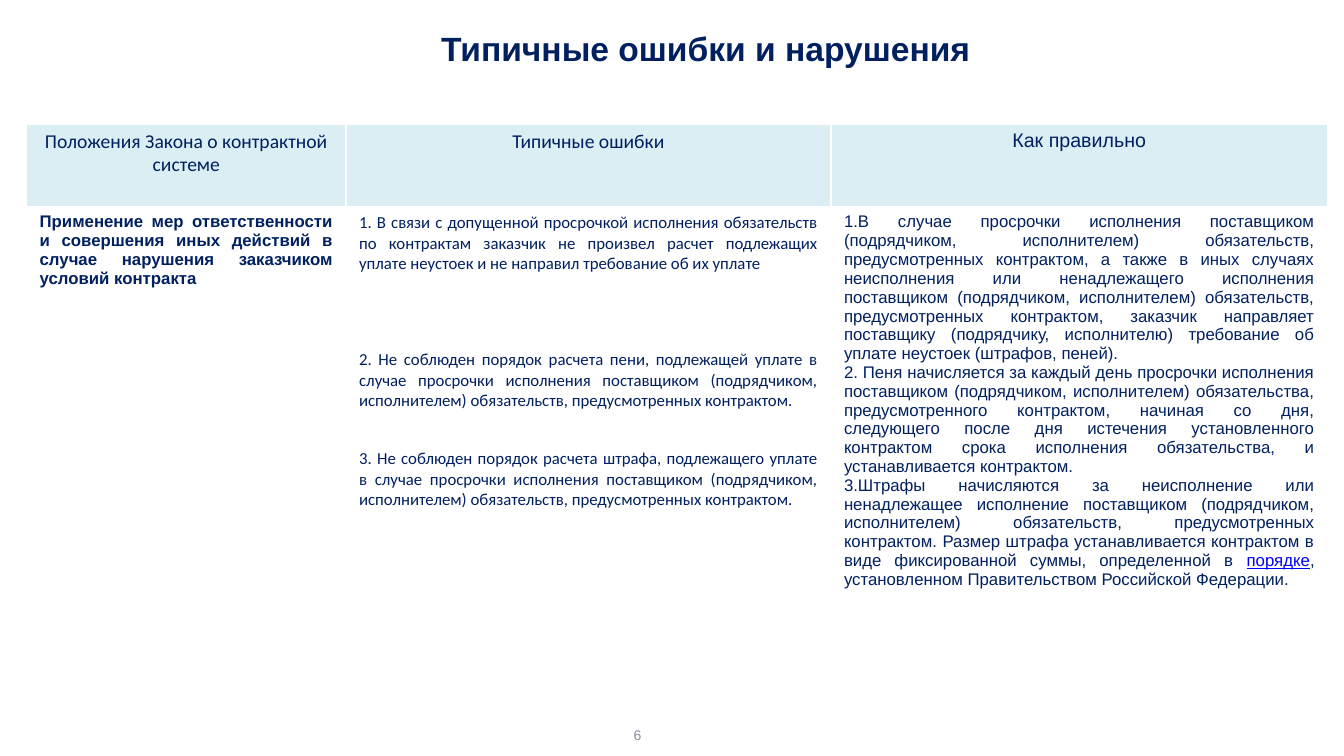
from pptx import Presentation
from pptx.dml.color import RGBColor
from pptx.enum.text import MSO_ANCHOR, PP_ALIGN
from pptx.oxml import parse_xml
from pptx.oxml.ns import nsdecls
from pptx.util import Cm, Pt

CENTER, FULL = PP_ALIGN.CENTER, PP_ALIGN.JUSTIFY
MIDDLE = MSO_ANCHOR.MIDDLE
NAVY = RGBColor(0x00, 0x20, 0x60)
PALE = RGBColor(0xDB, 0xEE, 0xF4)
BLUE = RGBColor(0x00, 0x00, 0xFF)
GREY = RGBColor(0x8C, 0x8D, 0x9D)

HEAD = {"size": Pt(14), "bold": False}
BODY = {"size": Pt(12), "bold": False}
STRONG = {"size": Pt(12), "bold": True}
TITLE = {"size": Pt(24), "bold": True, "name": "Arial"}
NUMBER = {"size": Pt(10), "name": "Arial"}
INSET = {"margin_left": Cm(0.33), "margin_right": Cm(0.33),
         "margin_top": Cm(0.13), "margin_bottom": Cm(0.13)}

WIDTHS = (8.05, 12.22, 12.52)
HEIGHTS = (2.1, 10.42)
HEADS = (("Положения Закона о контрактной системе", "Calibri"),
         ("Типичные ошибки", "Calibri"),
         ("Как правильно", "Arial"))
TOPIC = ("Применение мер ответственности и совершения иных действий в случае "
         "нарушения заказчиком условий контракта")
FAULTS = (
    (0, " В связи с допущенной просрочкой исполнения обязательств по контрактам "
        "заказчик не произвел расчет подлежащих уплате неустоек и не направил "
        "требование об их уплате"),
    (54, " Не соблюден порядок расчета пени, подлежащей уплате в случае просрочки "
         "исполнения поставщиком (подрядчиком, исполнителем) обязательств, "
         "предусмотренных контрактом."),
    (27, " Не соблюден порядок расчета штрафа, подлежащего уплате в случае просрочки "
         "исполнения поставщиком (подрядчиком, исполнителем) обязательств, "
         "предусмотренных контрактом."),
)
RULES = (
    (0, "В случае просрочки исполнения поставщиком (подрядчиком, исполнителем) "
        "обязательств, предусмотренных контрактом, а также в иных случаях "
        "неисполнения или ненадлежащего исполнения поставщиком (подрядчиком, "
        "исполнителем) обязательств, предусмотренных контрактом, заказчик "
        "направляет поставщику (подрядчику, исполнителю) требование об уплате "
        "неустоек (штрафов, пеней)."),
    (0, " Пеня начисляется за каждый день просрочки исполнения поставщиком "
        "(подрядчиком, исполнителем) обязательства, предусмотренного контрактом, "
        "начиная со дня, следующего после дня истечения установленного контрактом "
        "срока исполнения обязательства, и устанавливается контрактом."),
    (0, "Штрафы начисляются за неисполнение или ненадлежащее исполнение поставщиком "
        "(подрядчиком, исполнителем) обязательств, предусмотренных контрактом. "
        "Размер штрафа устанавливается контрактом в виде фиксированной суммы, "
        "определенной в ", "порядке",
        ", установленном Правительством Российской Федерации."),
)


def apply(item, form):
    """Set each attribute named in the format."""
    for key, value in form.items():
        setattr(item, key, value)


def write(para, parts, align, form, color=NAVY):
    """Fill a paragraph with runs; every second run is marked as a link."""
    para.alignment = align
    for i, part in enumerate(parts):
        run = para.add_run()
        run.text = part
        apply(run.font, form)
        run.font.color.rgb = BLUE if i % 2 else color
        if i % 2:
            run.font.underline = True


def number(para):
    """Give a paragraph an automatic number with no indent."""
    props = para._p.get_or_add_pPr()
    props.set("marL", "0")
    props.set("indent", "0")
    props.append(parse_xml(
        f'<a:buFont {nsdecls("a")} typeface="+mj-lt"/>'))
    props.append(parse_xml(
        f'<a:buAutoNum {nsdecls("a")} type="arabicPeriod"/>'))


def add_list(cell, items, form):
    """Write numbered items into a cell."""
    frame = cell.text_frame
    for i, (gap, *parts) in enumerate(items):
        para = frame.add_paragraph() if i else frame.paragraphs[0]
        number(para)
        if gap:
            para.space_before = Pt(gap)
        write(para, parts, FULL, form)
        apply(para.font, form)
        para.font.color.rgb = NAVY


def edge(cell, base):
    """Draw white borders with the given bottom width in points."""
    props = cell._tc.get_or_add_tcPr()
    for side, width in zip("LRTB", (1, 1, 1, base)):
        props.append(parse_xml(
            f'<a:ln{side} {nsdecls("a")} w="{Pt(width)}"><a:solidFill>'
            f'<a:srgbClr val="FFFFFF"/></a:solidFill></a:ln{side}>'))


def add_title(slide, box):
    """Place the slide title in the box."""
    title = slide.shapes.title
    apply(title, dict(zip(("left", "top", "width", "height"), box)))
    title.text_frame.vertical_anchor = MIDDLE
    write(title.text_frame.paragraphs[0], ["Типичные ошибки и нарушения"],
          CENTER, TITLE)


def add_grid(slide, box):
    """Place the table of faults and rules in the box."""
    table = slide.shapes.add_table(2, 3, *box).table
    table.horz_banding = False
    for col, width in zip(table.columns, WIDTHS):
        col.width = Cm(width)
    for row, height in zip(table.rows, HEIGHTS):
        row.height = Cm(height)
    for i, row in enumerate(table.rows):
        for cell in row.cells:
            apply(cell, INSET)
            edge(cell, 1 if i else 3)
            if i:
                cell.fill.background()
            else:
                cell.fill.solid()
                cell.fill.fore_color.rgb = PALE
    for i, (text, face) in enumerate(HEADS):
        write(table.cell(0, i).text_frame.paragraphs[0], [text], CENTER,
              {**HEAD, "name": face})
    write(table.cell(1, 0).text_frame.paragraphs[0], [TOPIC], FULL,
          {**STRONG, "name": "Arial"})
    add_list(table.cell(1, 1), FAULTS, {**BODY, "name": "Calibri"})
    add_list(table.cell(1, 2), RULES, {**BODY, "name": "Arial"})


def add_page(slide, box):
    """Place the page number in the box."""
    frame = slide.shapes.add_textbox(*box).text_frame
    apply(frame, {"word_wrap": True, "vertical_anchor": MIDDLE})
    write(frame.paragraphs[0], ["6"], None, NUMBER, GREY)


def main():
    """Build the slide and save it."""
    deck = Presentation()
    apply(deck, {"slide_width": Cm(33.87), "slide_height": Cm(19.05)})
    slide = deck.slides.add_slide(deck.slide_layouts[5])
    add_title(slide, (Cm(1.7), Cm(0), Cm(32.17), Cm(2.44)))
    add_grid(slide, (Cm(0.67), Cm(3.13), Cm(sum(WIDTHS)), Cm(sum(HEIGHTS))))
    add_page(slide, (Cm(15.72), Cm(18.2), Cm(7.42), Cm(0.64)))
    deck.save("out.pptx")


if __name__ == "__main__":
    main()
